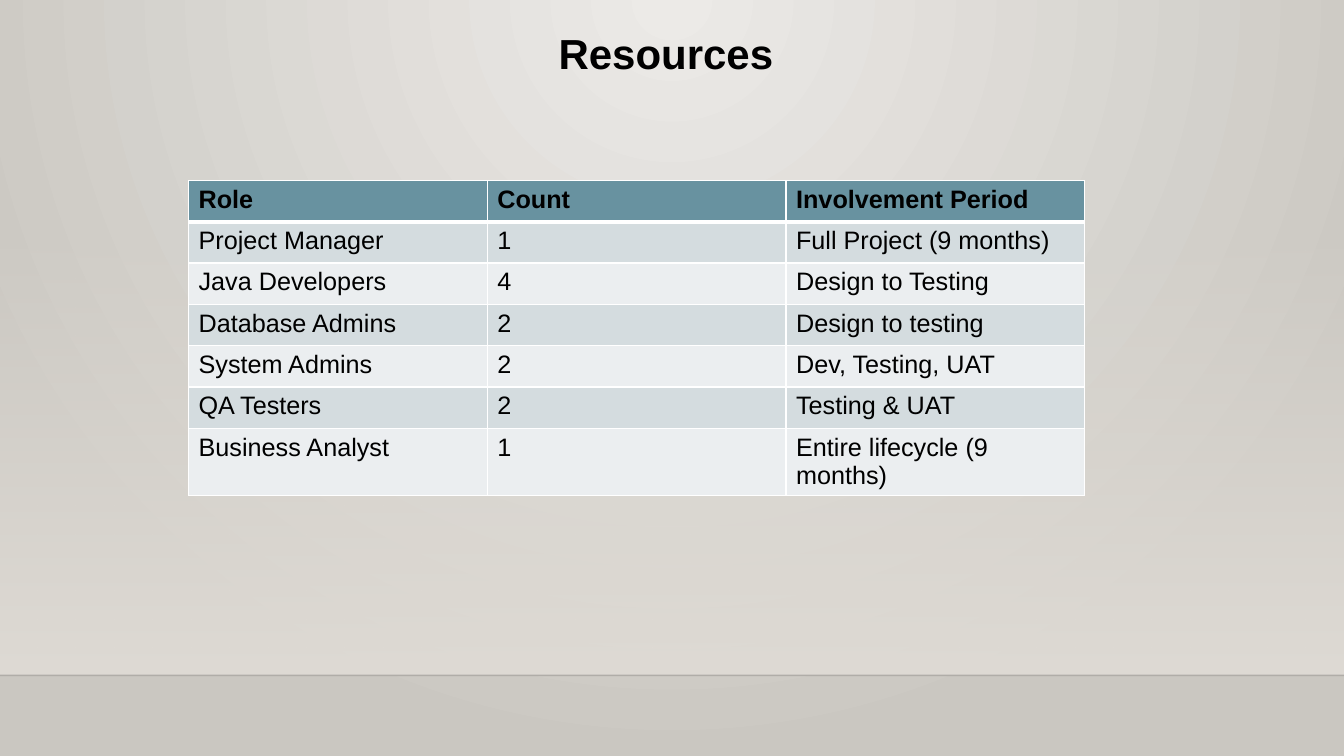
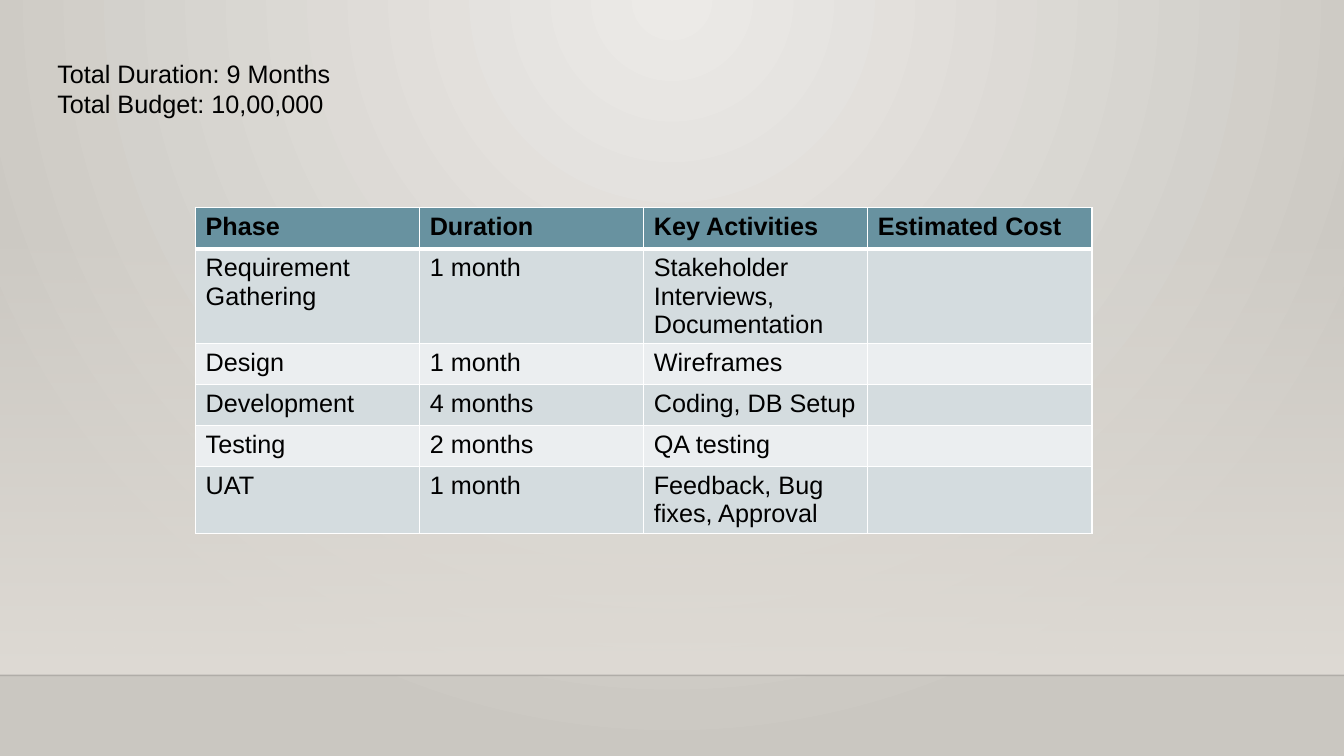
"""Build the project resources slide and the project timeline slide."""
from dataclasses import dataclass

from lxml.etree import SubElement
from pptx import Presentation
from pptx.dml.color import RGBColor
from pptx.enum.shapes import MSO_CONNECTOR, MSO_SHAPE
from pptx.enum.text import MSO_ANCHOR, PP_ALIGN
from pptx.oxml.ns import qn
from pptx.util import Inches, Pt


@dataclass(frozen=True)
class Theme:
    font: str = "Arial"
    title_size: int = 30
    body_size: int = 18
    text: str = "000000"
    glow: str = "ECEAE7"
    wall: str = "CAC7C1"
    haze: str = "DFDBD5"
    header: str = "6892A0"
    bands: tuple = ("D4DCDF", "EBEEF0")
    border: str = "FFFFFF"


theme = Theme()


def format_text(text_frame, size, bold=False):
    for paragraph in text_frame.paragraphs:
        for run in paragraph.runs:
            run.font.name = theme.font
            run.font.size = Pt(size)
            run.font.bold = bold
            run.font.color.rgb = RGBColor.from_string(theme.text)


def add_grid(slide, left, top, row_heights, rows):
    width = 8.89
    columns = len(rows[0])
    frame = slide.shapes.add_table(
        len(rows), columns, Inches(left), Inches(top), Inches(width), Inches(sum(row_heights))
    )
    table = frame.table
    for column in table.columns:
        column.width = Inches(width / columns)
    for row_index, (height, values) in enumerate(zip(row_heights, rows)):
        table.rows[row_index].height = Inches(height)
        is_header = row_index == 0
        fill_color = theme.header if is_header else theme.bands[(row_index - 1) % 2]
        border_widths = {
            "a:lnL": 1,
            "a:lnR": 1,
            "a:lnT": 3 if row_index == 1 else 1,
            "a:lnB": 3 if is_header else 1,
        }
        for column_index, value in enumerate(values):
            cell = table.cell(row_index, column_index)
            cell.text_frame.text = value
            format_text(cell.text_frame, theme.body_size, is_header)
            properties = cell._tc.get_or_add_tcPr()
            for side, points in border_widths.items():
                border = SubElement(properties, qn(side), w=str(Pt(points)))
                border_fill = SubElement(border, qn("a:solidFill"))
                SubElement(border_fill, qn("a:srgbClr"), val=theme.border)
            cell.fill.solid()
            cell.fill.fore_color.rgb = RGBColor.from_string(fill_color)


presentation = Presentation()
presentation.slide_width = Inches(13.33)
presentation.slide_height = Inches(7.5)
master = presentation.slide_master

resources_slide = presentation.slides.add_slide(presentation.slide_layouts[5])
timeline_slide = presentation.slides.add_slide(presentation.slide_layouts[6])

background_fill = master.background.fill
background_fill.gradient()
for stop, color in zip(background_fill.gradient_stops, (theme.glow, theme.wall)):
    stop.color.rgb = RGBColor.from_string(color)
gradient = master.element.find(".//" + qn("a:gradFill"))
gradient.remove(gradient.find(qn("a:lin")))
circle = SubElement(gradient, qn("a:path"), path="circle")
SubElement(circle, qn("a:fillToRect"), l="43000", t="0", r="43000", b="100000")

haze = resources_slide.shapes.add_shape(
    MSO_SHAPE.RECTANGLE, 0, Inches(2.21), presentation.slide_width, Inches(4.49)
)
haze.shadow.inherit = False
haze.line.fill.background()
haze.fill.gradient()
haze.fill.gradient_angle = 270
for stop in haze.fill.gradient_stops:
    stop.color.rgb = RGBColor.from_string(theme.haze)
SubElement(haze.element.find(".//" + qn("a:srgbClr")), qn("a:alpha"), val="0")

floor_line = resources_slide.shapes.add_connector(
    MSO_CONNECTOR.STRAIGHT, 0, Inches(6.7), presentation.slide_width, Inches(6.7)
)
floor_line.line.width = Pt(1)
floor_line.line.color.rgb = RGBColor.from_string(theme.text)
SubElement(floor_line.element.find(".//" + qn("a:srgbClr")), qn("a:alpha"), val="20000")
SubElement(floor_line.element.spPr, qn("a:effectLst"))

for position, shape in enumerate((haze, floor_line), start=2):
    master.shapes.element.insert(position, shape.element)

title = resources_slide.shapes.title
title.left, title.top = Inches(3.76), Inches(0.22)
title.width, title.height = Inches(5.69), Inches(0.61)
title.text_frame.text = "Resources"
title.text_frame.vertical_anchor = MSO_ANCHOR.MIDDLE
title.text_frame.paragraphs[0].alignment = PP_ALIGN.CENTER
format_text(title.text_frame, theme.title_size, bold=True)

add_grid(
    resources_slide, 1.87, 1.79, [0.41] * 6 + [0.67],
    [
        ("Role", "Count", "Involvement Period"),
        ("Project Manager", "1", "Full Project (9 months)"),
        ("Java Developers", "4", "Design to Testing"),
        ("Database Admins", "2", "Design to testing"),
        ("System Admins", "2", "Dev, Testing, UAT"),
        ("QA Testers", "2", "Testing & UAT"),
        ("Business Analyst", "1", "Entire lifecycle (9 months)"),
    ],
)

add_grid(
    timeline_slide, 1.94, 2.06, [0.41, 0.94, 0.4, 0.4, 0.4, 0.67],
    [
        ("Phase", "Duration", "Key Activities", "Estimated Cost"),
        ("Requirement Gathering", "1 month", "Stakeholder Interviews, Documentation", ""),
        ("Design", "1 month", "Wireframes", ""),
        ("Development", "4 months", "Coding, DB Setup", ""),
        ("Testing", "2 months", "QA testing", ""),
        ("UAT", "1 month", "Feedback, Bug fixes, Approval", ""),
    ],
)

totals = timeline_slide.shapes.add_textbox(Inches(0.47), Inches(0.53), Inches(5.7), Inches(0.71))
totals.text_frame.word_wrap = True
totals.text_frame.text = "Total Duration: 9 Months\nTotal Budget: 10,00,000"
format_text(totals.text_frame, theme.body_size)

presentation.save("out.pptx")
